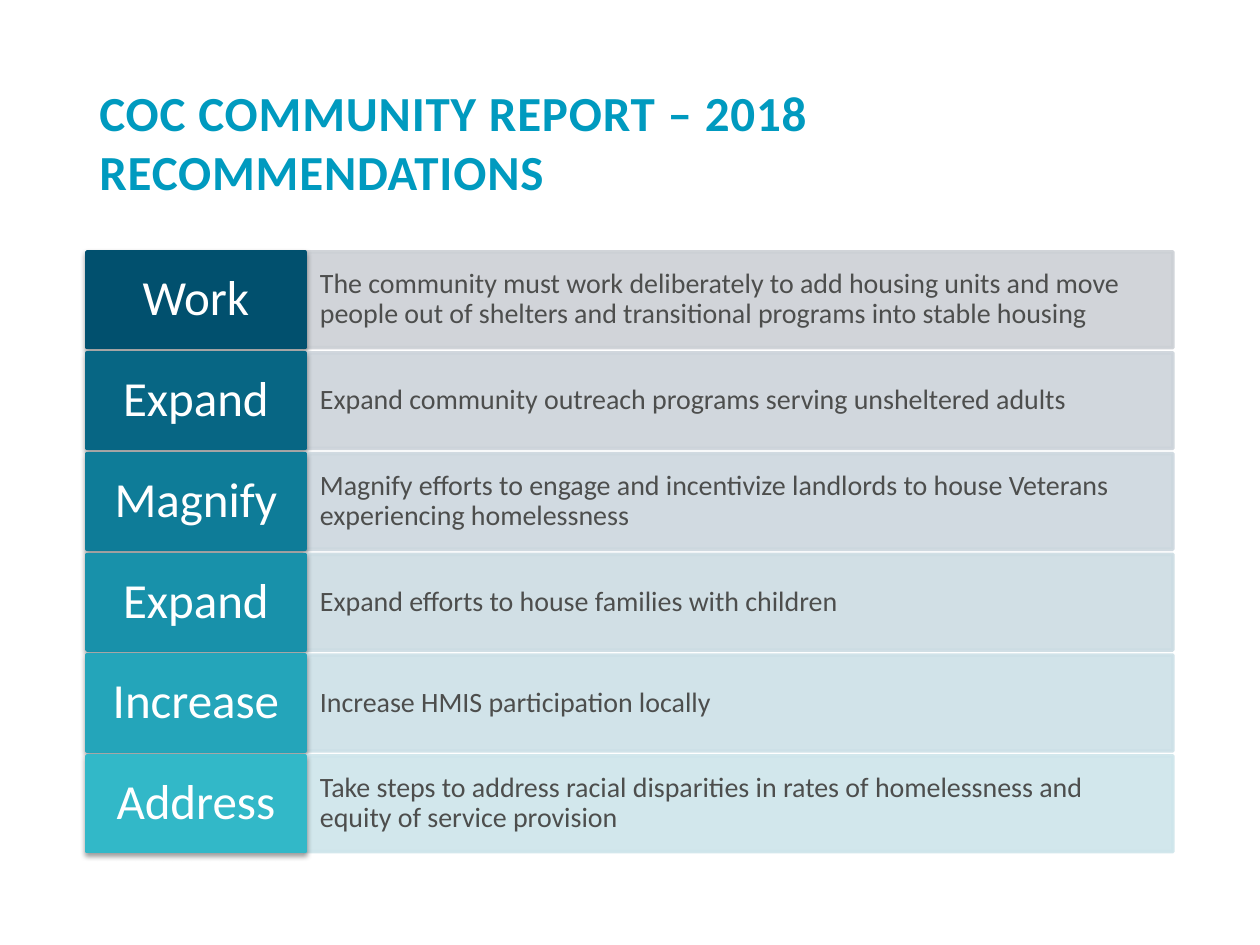
from dataclasses import dataclass

from lxml import etree
from pptx import Presentation
from pptx import util as u
from pptx.dml.color import RGBColor
from pptx.enum import shapes, text
from pptx.oxml import ns

FONT = "Calibri"
TITLE_COLOR = RGBColor(0x00, 0x9A, 0xBF)
BODY_COLOR = RGBColor(0x4D, 0x4E, 0x4D)
WHITE = RGBColor(0xFF, 0xFF, 0xFF)
BLACK = RGBColor(0x00, 0x00, 0x00)

LEFT, TOP = 0.69, 2.0
LABEL_W, DETAIL_W = 1.73, 6.9
DETAIL_LEFT = 2.41
ROW_H, ROW_PITCH = 0.76, 0.8


@dataclass(frozen=True)
class Recommendation:
    label: str
    detail: str
    label_fill: RGBColor
    detail_fill: RGBColor


@dataclass(frozen=True)
class CellStyle:
    left: float
    width: float
    size: int
    color: RGBColor
    align: text.PP_ALIGN
    inset_x: float
    inset_y: float


LABEL = CellStyle(LEFT, LABEL_W, 28, WHITE, text.PP_ALIGN.CENTER, 0.09, 0.07)
DETAIL = CellStyle(DETAIL_LEFT, DETAIL_W, 16, BODY_COLOR, text.PP_ALIGN.LEFT, 0.13, 0.19)

RECOMMENDATIONS = [
    Recommendation(
        "Work",
        "The community must work deliberately to add housing units and move "
        "people out of shelters and transitional programs into stable housing",
        RGBColor(0x01, 0x50, 0x6E), RGBColor(0xCC, 0xD0, 0xD5)),
    Recommendation(
        "Expand",
        "Expand community outreach programs serving unsheltered adults",
        RGBColor(0x07, 0x66, 0x84), RGBColor(0xCC, 0xD3, 0xDA)),
    Recommendation(
        "Magnify",
        "Magnify efforts to engage and incentivize landlords to house Veterans "
        "experiencing homelessness",
        RGBColor(0x0E, 0x7C, 0x98), RGBColor(0xCC, 0xD7, 0xDE)),
    Recommendation(
        "Expand",
        "Expand efforts to house families with children",
        RGBColor(0x18, 0x91, 0xAA), RGBColor(0xCC, 0xDC, 0xE3)),
    Recommendation(
        "Increase",
        "Increase HMIS participation locally",
        RGBColor(0x24, 0xA5, 0xBA), RGBColor(0xCD, 0xE0, 0xE7)),
    Recommendation(
        "Address",
        "Take steps to address racial disparities in rates of homelessness and "
        "equity of service provision",
        RGBColor(0x32, 0xB8, 0xC8), RGBColor(0xCE, 0xE5, 0xEB)),
]


def set_opacity(sp, percent: int) -> None:
    for clr in sp._element.spPr.iter(ns.qn("a:srgbClr")):
        etree.SubElement(clr, ns.qn("a:alpha"), val=str(percent * 1000))


def add_drop_shadow(sp) -> None:
    effects = sp._element.spPr.find(ns.qn("a:effectLst"))
    shadow = etree.SubElement(
        effects, ns.qn("a:outerShdw"), blurRad=str(u.Pt(3.1)), dist=str(u.Pt(1.6)),
        dir="5400000", rotWithShape="0")
    clr = etree.SubElement(shadow, ns.qn("a:srgbClr"), val=str(BLACK))
    etree.SubElement(clr, ns.qn("a:alpha"), val="38000")


def add_cell(s, style: CellStyle, top: float, words: str, fill: RGBColor):
    sp = s.shapes.add_shape(
        shapes.MSO_SHAPE.RECTANGLE, u.Inches(style.left), u.Inches(top),
        u.Inches(style.width), u.Inches(ROW_H))
    sp.shadow.inherit = False
    sp.fill.solid()
    sp.fill.fore_color.rgb = fill
    sp.line.color.rgb = fill
    sp.line.width = u.Pt(2)
    tf = sp.text_frame
    tf.word_wrap = True
    tf.vertical_anchor = text.MSO_ANCHOR.MIDDLE
    tf.margin_left = tf.margin_right = u.Inches(style.inset_x)
    tf.margin_top = tf.margin_bottom = u.Inches(style.inset_y)
    tf.text = words
    p = tf.paragraphs[0]
    p.alignment = style.align
    p.line_spacing = 0.9
    p.font.name = FONT
    p.font.size = u.Pt(style.size)
    p.font.color.rgb = style.color
    return sp


def add_title(s, words: str) -> None:
    sp = s.shapes.add_textbox(u.Inches(LEFT), u.Inches(0.4), u.Inches(8.62), u.Inches(1.45))
    tf = sp.text_frame
    tf.word_wrap = True
    tf.vertical_anchor = text.MSO_ANCHOR.MIDDLE
    tf.text = words
    for r in tf.paragraphs[0].runs:
        r.font.name = FONT
        r.font.size = u.Pt(28)
        r.font.bold = True
        r.font.color.rgb = TITLE_COLOR
        r._r.get_or_add_rPr().set("spc", "50")


def main() -> None:
    prs = Presentation()
    prs.slide_width, prs.slide_height = u.Inches(10), u.Inches(7.5)
    s = prs.slides.add_slide(prs.slide_layouts[6])
    add_title(s, "COC COMMUNITY REPORT – 2018\vRECOMMENDATIONS")
    for i, rec in enumerate(RECOMMENDATIONS):
        top = TOP + i * ROW_PITCH
        set_opacity(add_cell(s, DETAIL, top, rec.detail, rec.detail_fill), 90)
        add_drop_shadow(add_cell(s, LABEL, top, rec.label, rec.label_fill))
    prs.save("out.pptx")


if __name__ == "__main__":
    main()
